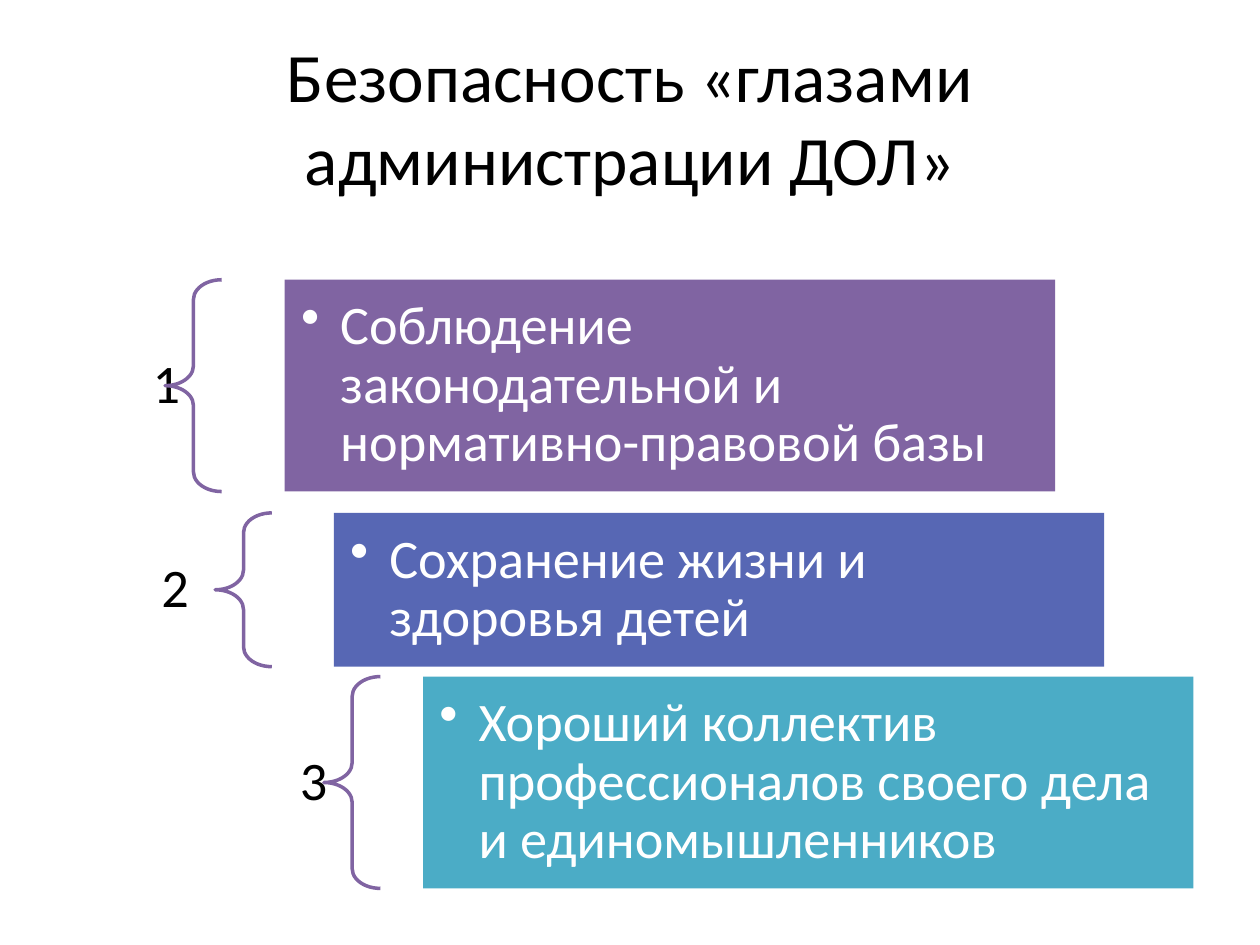
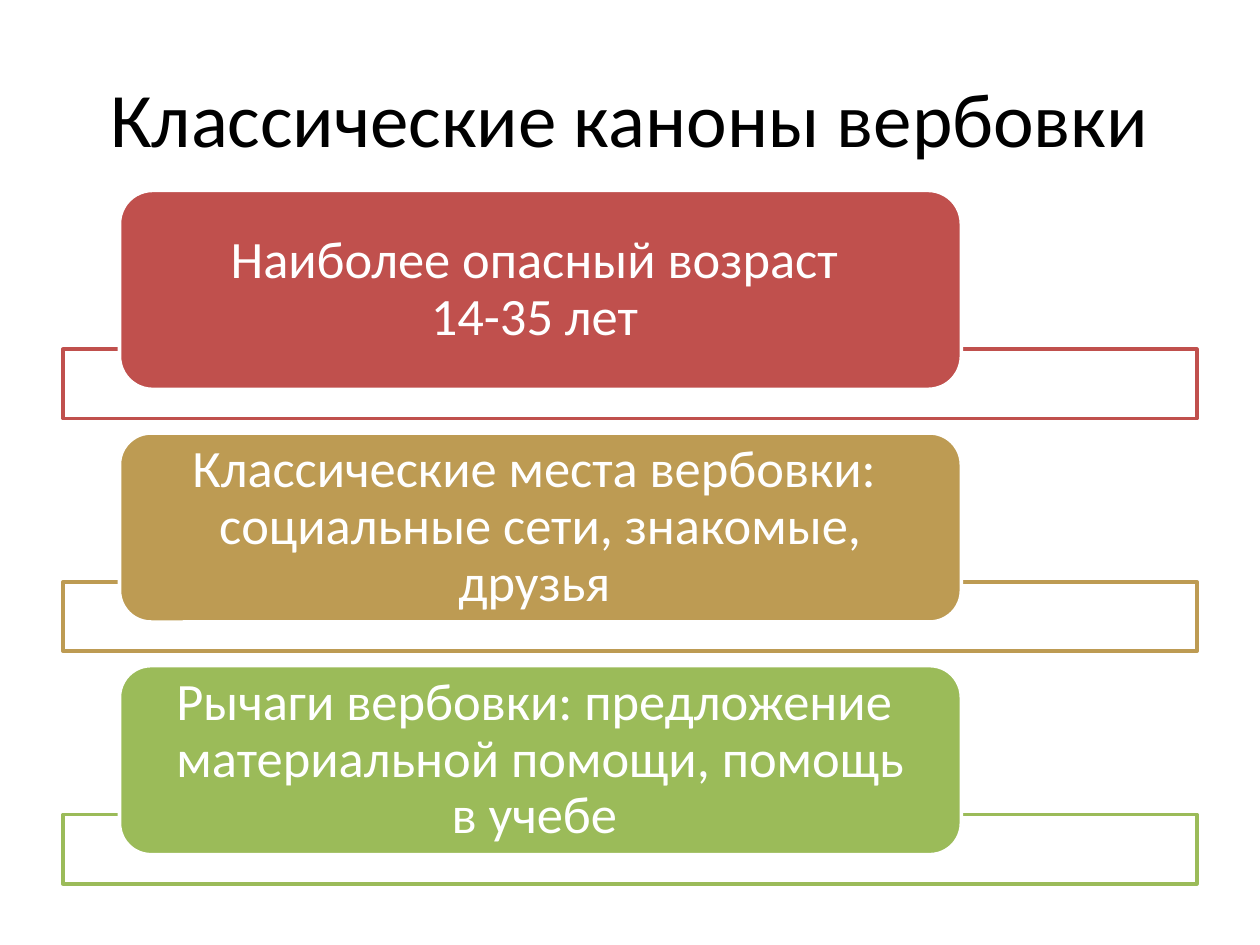
from pptx import Presentation
from pptx.dml.color import RGBColor
from pptx.enum import shapes, text
from pptx.oxml.ns import qn
from pptx.util import Cm, Pt
from lxml import etree

FONT = "Calibri"
HUES = {
    "ink": "000000", "white": "FFFFFF", "plum": "8064A2", "blue": "5767B4",
    "teal": "4BACC6", "red": "C0504D", "sand": "BD9B53", "green": "9BBB59",
}
KIND = shapes.MSO_SHAPE
SIDE = text.PP_ALIGN

GOALS = [
    ("Соблюдение законодательной и нормативно-правовой базы",
     "plum", 5.74, 5.64, 4.27, 3.33, 4.24),
    ("Сохранение жизни и здоровья детей",
     "blue", 6.73, 10.34, 3.1, 4.34, 4.42),
    ("Хороший коллектив профессионалов своего дела и единомышленников",
     "teal", 8.53, 13.64, 4.27, 6.53, 7.21),
]
CANONS = [
    ("Наиболее опасный возраст \n14-35 лет ", "red", 4.01),
    ("Классические места вербовки: \nсоциальные сети, знакомые, друзья ", "sand", 3.81),
    ("Рычаги вербовки: предложение \nматериальной помощи, помощь в учебе ", "green", 3.81),
]


def hue(name):
    return RGBColor.from_string(HUES[name])


def write(shape, words, size, ink, side, pad=(0.25, 0.13), pitch=None):
    frame = shape.text_frame
    frame.word_wrap = True
    frame.auto_size = text.MSO_AUTO_SIZE.NONE
    frame.vertical_anchor = text.MSO_ANCHOR.MIDDLE
    frame.margin_left = frame.margin_right = Cm(pad[0])
    frame.margin_top = frame.margin_bottom = Cm(pad[1])
    para = frame.paragraphs[0]
    para.alignment = side
    if pitch:
        para.line_spacing = pitch
    for i, line in enumerate(words.split("\n")):
        if i:
            para.add_line_break()
        run = para.add_run()
        run.text = line
        run.font.name = FONT
        run.font.size = Pt(size)
        run.font.color.rgb = hue(ink)
    return para


def draw(slide, kind, box, fill=None, line=None):
    shape = slide.shapes.add_shape(kind, *map(Cm, box))
    shape.shadow.inherit = False
    if fill:
        shape.fill.solid()
        shape.fill.fore_color.rgb = hue(fill)
    else:
        shape.fill.background()
    if line:
        shape.line.color.rgb = hue(line)
        shape.line.width = Pt(2)
    else:
        shape.line.fill.background()
    return shape


def bullet(para):
    props = para._p.get_or_add_pPr()
    props.set("marL", str(Cm(0.79)))
    props.set("indent", str(-Cm(0.79)))
    etree.SubElement(props, qn("a:buChar")).set("char", "•")


def start(deck, words, size):
    slide = deck.slides.add_slide(deck.slide_layouts[5])
    title = slide.shapes.title
    title.left, title.top, title.width, title.height = map(Cm, (1.27, 0.76, 22.86, 3.18))
    write(title, words, size, "ink", SIDE.CENTER)
    return slide


def goal(slide, number, words, tint, left, top, height, curl, edge):
    tall = 1.7
    label = slide.shapes.add_textbox(
        Cm(1.5), Cm(top + (height - tall) / 2), Cm(edge - 1.5), Cm(tall))
    write(label, str(number), 31, "ink", SIDE.RIGHT, (0.61, 0.23), 0.9)
    brace = draw(slide, KIND.LEFT_BRACE, (curl, top, 1.14, height), line="plum")
    brace.adjustments[0] = 0.35
    panel = draw(slide, KIND.RECTANGLE, (left, top, 15.53, height), tint)
    bullet(write(panel, words, 31, "white", SIDE.LEFT, (0.33, 0.33), 0.9))


def canon(slide, base, words, tint, height):
    draw(slide, KIND.RECTANGLE, (1.27, base - 0.81, 22.86, 1.4), "white", tint)
    card = draw(slide, KIND.ROUNDED_RECTANGLE,
                (2.41, base - height, 16.97, height), tint, "white")
    write(card, words, 30, "white", SIDE.CENTER, (0.61, 0), 0.9)


def main():
    deck = Presentation()
    deck.slide_width, deck.slide_height = Cm(25.4), Cm(19.05)
    slide = start(deck, "Безопасность «глазами администрации ДОЛ»", 39.6)
    for number, row in enumerate(GOALS, 1):
        goal(slide, number, *row)
    slide = start(deck, "Классические каноны вербовки", 44)
    for i, row in enumerate(CANONS):
        canon(slide, 7.85 + 4.69 * i, *row)
    deck.save("out.pptx")


if __name__ == "__main__":
    main()
